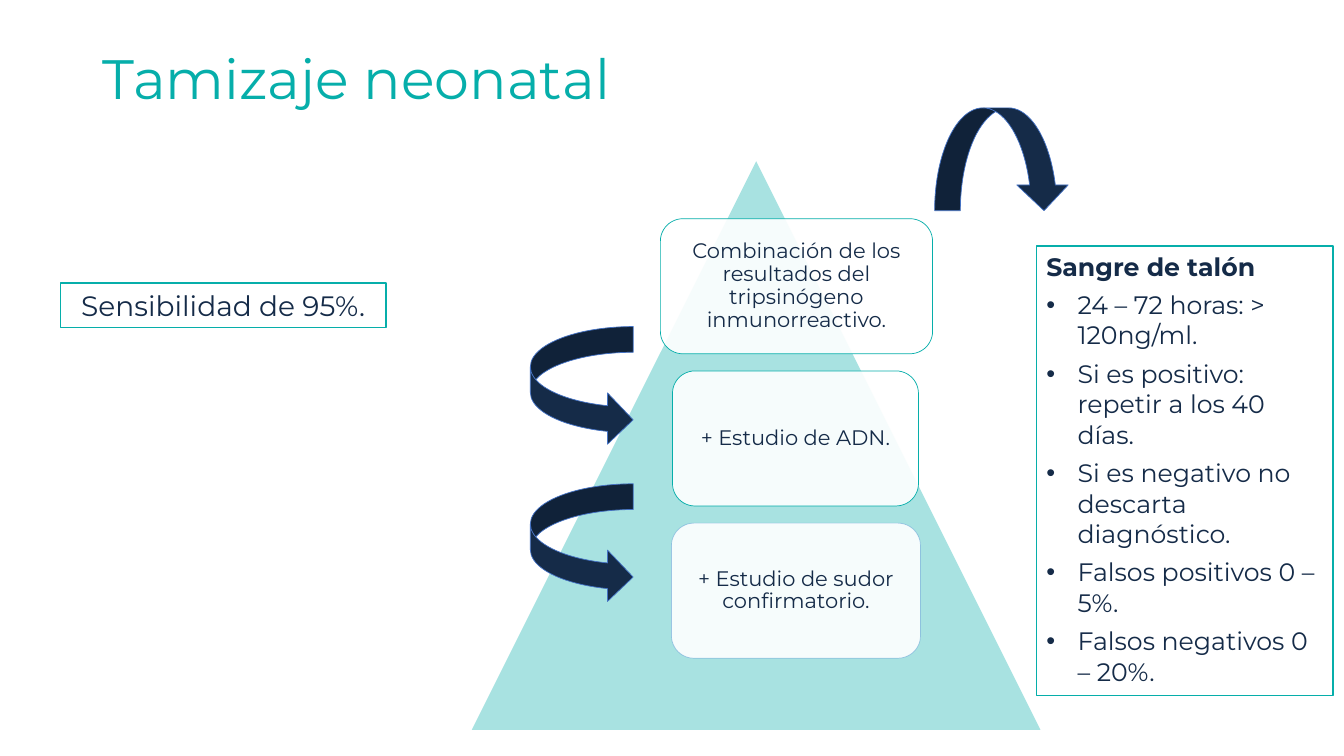
from lxml import etree
from pptx import Presentation
from pptx import util as u
from pptx.dml.color import RGBColor
from pptx.enum import shapes, text
from pptx.oxml.ns import qn

PX = 9144
FONT = "Montserrat"
COLORS = {"teal": "06AEAA", "navy": "152B48", "white": "FFFFFF",
          "sky": "5B9BD5", "blue": "4472C4"}

TITLE = ("Tamizaje neonatal", (92, 40, 1150, 82))
PYRAMID = (468, 160, 564, 564)
STEP_TOP, STEP_HEIGHT, STEP_PITCH = 217, 134, 151
STEPS = [
    ("Combinación de los resultados del tripsinógeno inmunorreactivo.", 655, 270, "teal", 100),
    ("+ Estudio de ADN.", 667, 244, "teal", 100),
    ("+ Estudio de sudor confirmatorio.", 666, 247, "sky", 50),
]
SENSITIVITY = ("Sensibilidad de 95%.", (60, 281, 323, 44))
SAMPLE_PLACE = (1028, 244, 294, 446)
SAMPLE_HEADING = "Sangre de talón"
SAMPLE_POINTS = [
    "24 – 72 horas: > 120ng/ml.",
    "Si es positivo: repetir a los 40 días.",
    "Si es negativo no descarta diagnóstico.",
    "Falsos positivos 0 – 5%.",
    "Falsos negativos 0 – 20%.",
]
KIND = shapes.MSO_SHAPE
ARROWS = [
    (KIND.CURVED_DOWN_ARROW, (927, 107, 134, 102)),
    (KIND.CURVED_RIGHT_ARROW, (526, 324, 102, 118)),
    (KIND.CURVED_RIGHT_ARROW, (526, 480, 102, 118)),
]


def rgb(name):
    return RGBColor.from_string(COLORS[name])


def paint(fill, color, opacity=100):
    fill.solid()
    fill.fore_color.rgb = rgb(color)
    if opacity < 100:
        for element in fill._xPr.iter(qn("a:srgbClr")):
            etree.SubElement(element, qn("a:alpha"), val=str(opacity * 1000))


def add_box(page, kind, place, fill, opacity=100, line=None, width=1, line_opacity=100):
    box = page.shapes.add_shape(kind, *(v * PX for v in place))
    box.shadow.inherit = False
    paint(box.fill, fill, opacity)
    if line:
        box.line.width = u.Pt(width)
        paint(box.line.fill, line, line_opacity)
    else:
        box.line.fill.background()
    return box


def write(box, words, size, color="navy", bold=False, align=text.PP_ALIGN.LEFT,
          anchor=text.MSO_ANCHOR.MIDDLE, spacing=None, before=0, bullet=False, more=False):
    frame = box.text_frame
    frame.word_wrap = True
    frame.vertical_anchor = anchor
    para = frame.add_paragraph() if more else frame.paragraphs[0]
    if bullet:
        props = para._p.get_or_add_pPr()
        props.set("marL", str(31 * PX))
        props.set("indent", str(-31 * PX))
        etree.SubElement(props, qn("a:buFont"), typeface="Arial")
        etree.SubElement(props, qn("a:buChar"), char="•")
    para.alignment = align
    para.space_before = u.Pt(before)
    if spacing:
        para.line_spacing = spacing
    span = para.add_run()
    span.text = words
    span.font.name = FONT
    span.font.size = u.Pt(size)
    span.font.bold = bold
    span.font.color.rgb = rgb(color)


def main():
    deck = Presentation()
    deck.slide_width, deck.slide_height = 1333 * PX, 750 * PX
    page = deck.slides.add_slide(deck.slide_layouts[5])
    center, top = text.PP_ALIGN.CENTER, text.MSO_ANCHOR.TOP

    words, place = TITLE
    title = page.shapes.title
    title.left, title.top, title.width, title.height = (v * PX for v in place)
    write(title, words, 39.6, color="teal", spacing=0.9)

    add_box(page, KIND.ISOSCELES_TRIANGLE, PYRAMID, "teal", opacity=35)
    for row, (words, left, width, line, line_opacity) in enumerate(STEPS):
        place = (left, STEP_TOP + row * STEP_PITCH, width, STEP_HEIGHT)
        step = add_box(page, KIND.ROUNDED_RECTANGLE, place, "white", opacity=90,
                       line=line, width=0.5, line_opacity=line_opacity)
        frame = step.text_frame
        frame.margin_left = frame.margin_right = 6 * PX
        frame.margin_top = frame.margin_bottom = 6 * PX
        write(step, words, 15, align=center, spacing=0.9)

    words, place = SENSITIVITY
    sensitivity = add_box(page, KIND.RECTANGLE, place, "white", line="teal")
    write(sensitivity, words, 20, align=center, anchor=top)

    sample = add_box(page, KIND.RECTANGLE, SAMPLE_PLACE, "white", line="teal")
    write(sample, SAMPLE_HEADING, 18, bold=True, anchor=top)
    for point in SAMPLE_POINTS:
        write(sample, point, 18, anchor=top, before=6, bullet=True, more=True)

    for kind, place in ARROWS:
        add_box(page, kind, place, "navy", line="blue", width=0.5)

    deck.save("out.pptx")


if __name__ == "__main__":
    main()
